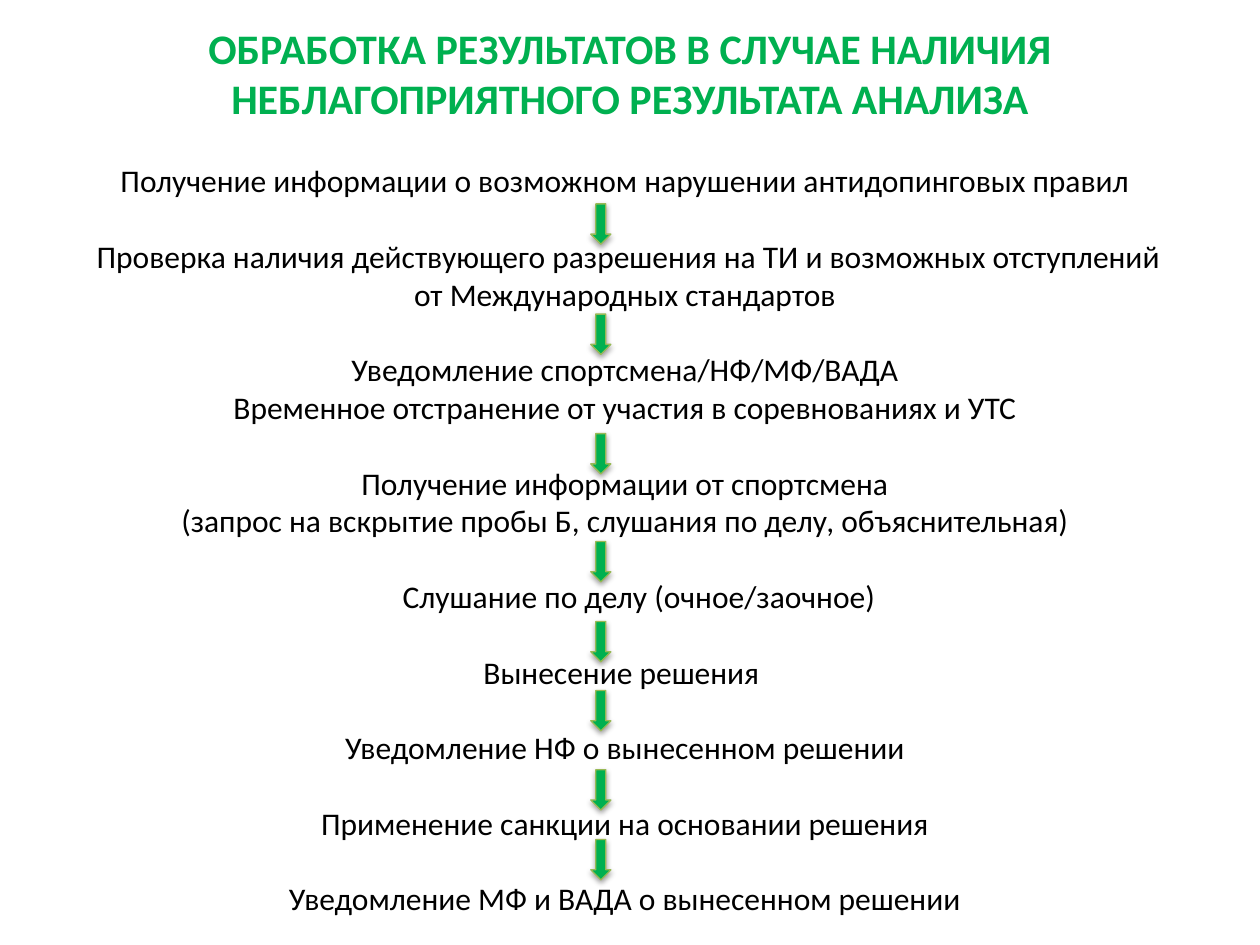
from lxml import etree
from pptx import Presentation
from pptx.dml.color import RGBColor
from pptx.enum.shapes import MSO_SHAPE
from pptx.enum.text import MSO_ANCHOR, MSO_AUTO_SIZE, PP_ALIGN
from pptx.oxml.ns import qn
from pptx.util import Inches, Pt

GREEN = RGBColor(0x00, 0xB0, 0x50)
OLIVE = RGBColor(0x98, 0xB9, 0x55)
BLACK = RGBColor(0x00, 0x00, 0x00)
CENTER = PP_ALIGN.CENTER
MIDDLE = MSO_ANCHOR.MIDDLE
GROW = MSO_AUTO_SIZE.SHAPE_TO_FIT_TEXT
DOWN_ARROW = MSO_SHAPE.DOWN_ARROW
FONT = "Calibri"

TITLE = "ОБРАБОТКА РЕЗУЛЬТАТОВ В СЛУЧАЕ НАЛИЧИЯ НЕБЛАГОПРИЯТНОГО РЕЗУЛЬТАТА АНАЛИЗА"
STEPS = [
    ["Получение информации о возможном нарушении антидопинговых правил"],
    [" Проверка наличия действующего разрешения на ТИ и возможных отступлений "
     "от Международных стандартов"],
    ["Уведомление спортсмена/НФ/МФ/ВАДА",
     "Временное отстранение от участия в соревнованиях и УТС"],
    ["Получение информации от спортсмена",
     "(запрос на вскрытие пробы Б, слушания по делу, объяснительная)"],
    ["Слушание по делу (очное/заочное)"],
    ["Вынесение решения "],
    ["Уведомление НФ о вынесенном решении"],
    ["Применение санкции на основании решения"],
    ["Уведомление МФ и ВАДА о вынесенном решении"],
]
STEP_GAP = Pt(21.6)
INDENTS = {4: Pt(16)}  # step number: left indent

# Arrow tops as shares of the height of the steps box
ARROW_TOPS = [0.063, 0.205, 0.359, 0.498, 0.601, 0.69, 0.792, 0.882]
ARROW_LEFT = 0.469
ARROW_WIDTH, ARROW_HEIGHT = Inches(0.16), Inches(0.32)


def add_span(para, text, size, color, bold=False):
    para.alignment = CENTER
    span = para.add_run()
    span.text = text
    span.font.name = FONT
    span.font.size = Pt(size)
    span.font.bold = bold
    span.font.color.rgb = color


def place_title(page, left, top, width, height):
    title = page.shapes.title
    title.left, title.top, title.width, title.height = left, top, width, height
    title.text_frame.vertical_anchor = MIDDLE
    add_span(title.text_frame.paragraphs[0], TITLE, 24, GREEN, bold=True)


def add_steps(page, left, top, width, height):
    frame = page.shapes.add_textbox(left, top, width, height).text_frame
    frame.word_wrap = True
    frame.auto_size = GROW
    for number, lines in enumerate(STEPS):
        for row, line in enumerate(lines):
            first = number == row == 0
            para = frame.paragraphs[0] if first else frame.add_paragraph()
            if row == 0 and number:
                para.space_before = STEP_GAP
            if number in INDENTS:
                para._p.get_or_add_pPr().set("marL", str(INDENTS[number]))
            add_span(para, line, 18, BLACK)


def add_soft_shadow(shape):
    shape.shadow.inherit = False
    effects = shape._element.spPr.find(qn("a:effectLst"))
    shadow = etree.SubElement(effects, qn("a:outerShdw"), blurRad="40000",
                              dist="20000", dir="5400000", rotWithShape="0")
    color = etree.SubElement(shadow, qn("a:srgbClr"), val=str(BLACK))
    etree.SubElement(color, qn("a:alpha"), val="38000")


def add_arrows(page, left, top, width, height):
    """Put an arrow between each two steps of the box."""
    for share in ARROW_TOPS:
        arrow = page.shapes.add_shape(
            DOWN_ARROW, left + int(width * ARROW_LEFT), top + int(height * share),
            ARROW_WIDTH, ARROW_HEIGHT)
        arrow.fill.solid()
        arrow.fill.fore_color.rgb = GREEN
        arrow.line.color.rgb = OLIVE
        arrow.line.width = Pt(0.75)
        add_soft_shadow(arrow)


def main():
    deck = Presentation()
    deck.slide_width, deck.slide_height = Inches(10), Inches(7.5)
    page = deck.slides.add_slide(deck.slide_layouts[5])
    place_title(page, 0, 0, deck.slide_width, Inches(1.15))
    steps_box = [Inches(side) for side in (0.59, 1.23, 8.74, 6.16)]
    add_steps(page, *steps_box)
    add_arrows(page, *steps_box)
    deck.save("out.pptx")


if __name__ == "__main__":
    main()
